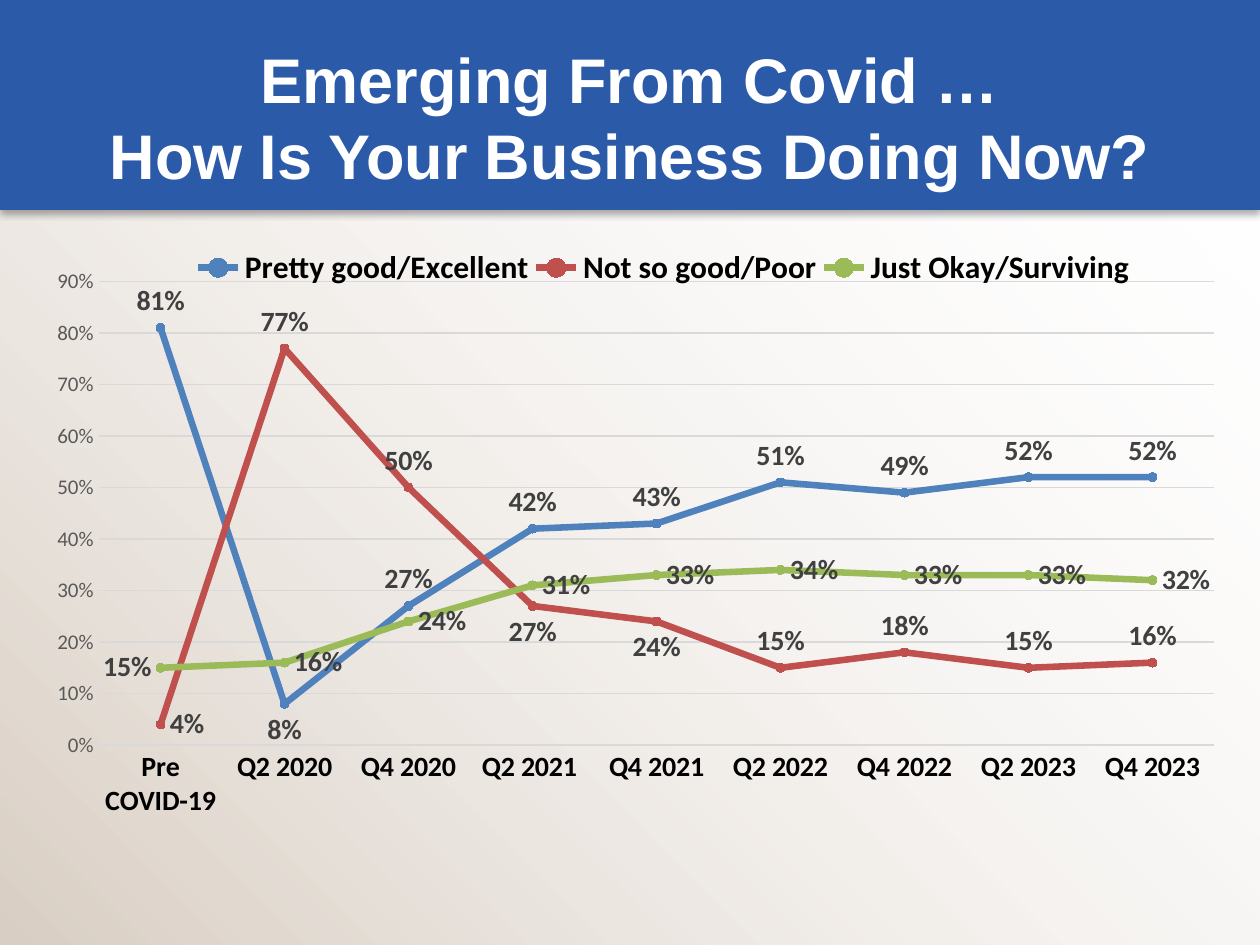
from lxml.etree import SubElement
from pptx import Presentation
from pptx.chart.data import CategoryChartData
from pptx.dml.color import RGBColor
from pptx.enum.chart import XL_CHART_TYPE, XL_LABEL_POSITION, XL_LEGEND_POSITION, XL_MARKER_STYLE, XL_TICK_MARK
from pptx.enum.shapes import MSO_SHAPE
from pptx.enum.text import MSO_ANCHOR, PP_ALIGN
from pptx.oxml import parse_xml
from pptx.oxml.ns import nsdecls, qn
from pptx.util import Pt

SCALE = 914400 / 126
WIDE, HIGH = 1260, 945
ABOVE, BELOW = XL_LABEL_POSITION.ABOVE, XL_LABEL_POSITION.BELOW
LEFT, RIGHT = XL_LABEL_POSITION.LEFT, XL_LABEL_POSITION.RIGHT

CATS = ["Pre COVID-19", "Q2 2020", "Q4 2020", "Q2 2021 ", "Q4 2021",
        "Q2 2022", "Q4 2022", "Q2 2023", "Q4 2023"]
LINES = [
    ("Pretty good/Excellent", [81, 8, 27, 42, 43, 51, 49, 52, 52],
     "4F81BD", ABOVE, {1: BELOW}),
    ("Not so good/Poor", [4, 77, 50, 27, 24, 15, 18, 15, 16],
     "C0504D", ABOVE, {0: RIGHT, 3: BELOW, 4: BELOW}),
    ("Just Okay/Surviving", [15, 16, 24, 31, 33, 34, 33, 33, 32],
     "9BBB59", RIGHT, {0: LEFT}),
]


def px(num):
    return round(num * SCALE)


def paint(code):
    return RGBColor.from_string(code)


def style(font, size, color, bold=False, name="Calibri"):
    font.size = Pt(size)
    font.bold = bold
    font.name = name
    font.color.rgb = paint(color)


def write(frame, text, align=PP_ALIGN.CENTER, **look):
    frame.text = text
    for para in frame.paragraphs:
        para.alignment = align
        for run in para.runs:
            style(run.font, **look)


def block(slide, box):
    shape = slide.shapes.add_shape(MSO_SHAPE.RECTANGLE, *map(px, box))
    shape.shadow.inherit = False
    shape.line.fill.background()
    return shape


def back(slide, box):
    shape = block(slide, box)
    shape.fill.gradient()
    shape.fill.gradient_angle = 45
    for stop, code, spot in zip(shape.fill.gradient_stops, ("DACFC4", "FFFFFF"), (0, 1)):
        stop.color.rgb = paint(code)
        stop.position = spot
    last = list(shape.element.spPr.iter(qn("a:srgbClr")))[-1]
    SubElement(last, qn("a:alpha"), val="0")


def header(slide, box):
    left, top, wide, high = box
    band = block(slide, box)
    band.fill.solid()
    band.fill.fore_color.rgb = paint("2B5AA9")
    glow = band.element.spPr.find(qn("a:effectLst"))
    glow.append(parse_xml(
        f'<a:outerShdw {nsdecls("a")} blurRad="{Pt(4)}" dist="{Pt(2.2)}" dir="5400000" '
        'rotWithShape="0"><a:srgbClr val="000000"><a:alpha val="32000"/></a:srgbClr></a:outerShdw>'))
    title = slide.shapes.title
    title.left, title.top = px(left + 63), px(top + 38)
    title.width, title.height = px(wide - 126), px(high - 53)
    frame = title.text_frame
    frame.margin_left = frame.margin_right = px(6)
    frame.margin_top = frame.margin_bottom = px(6)
    frame.vertical_anchor = MSO_ANCHOR.MIDDLE
    write(frame, "Emerging From Covid …\vHow Is Your Business Doing Now?",
          size=36, color="FFFFFF", bold=True, name="Arial")
    slide.shapes.element.append(title.element)


def layout(node, index, inner=False, **parts):
    old = node.find(qn("c:layout"))
    if old is not None:
        node.remove(old)
    new = parse_xml(f'<c:layout {nsdecls("c")}><c:manualLayout/></c:layout>')
    if inner:
        SubElement(new[0], qn("c:layoutTarget"), val="inner")
    for key in ("xMode", "yMode"):
        SubElement(new[0], qn("c:" + key), val="edge")
    for key, val in parts.items():
        SubElement(new[0], qn("c:" + key), val=str(val))
    node.insert(index, new)


def axes(chart):
    cat, val = chart.category_axis, chart.value_axis
    for axis in (cat, val):
        axis.major_tick_mark = axis.minor_tick_mark = XL_TICK_MARK.NONE
    style(cat.tick_labels.font, 16, "000000", True)
    style(val.tick_labels.font, 12, "595959")
    val.minimum_scale, val.maximum_scale, val.major_unit = 0, 0.9, 0.1
    val.tick_labels.number_format = "0%"
    val.tick_labels.number_format_is_linked = False
    val.format.line.fill.background()
    for line in (cat.format.line, val.major_gridlines.format.line):
        line.color.rgb = paint("D9D9D9")
        line.width = Pt(0.75)


def trace(line, color, place, moved):
    line.smooth = False
    line.format.line.color.rgb = paint(color)
    line.format.line.width = Pt(3.75)
    mark = line.marker
    mark.style, mark.size = XL_MARKER_STYLE.CIRCLE, 5
    mark.format.fill.solid()
    mark.format.fill.fore_color.rgb = paint(color)
    mark.format.line.color.rgb = paint(color)
    labels = line.data_labels
    labels.show_value = True
    labels.number_format = "0%"
    labels.number_format_is_linked = False
    labels.position = place
    style(labels.font, 16, "404040", True)
    for index, side in moved.items():
        label = line.points[index].data_label
        style(label.font, 16, "404040", True)
        label.position = side


def graph(slide, box):
    data = CategoryChartData(number_format="0%")
    data.categories = CATS
    for name, vals, *_ in LINES:
        data.add_series(name, [val / 100 for val in vals])
    chart = slide.shapes.add_chart(XL_CHART_TYPE.LINE_MARKERS, *map(px, box), data).chart
    style(chart.font, 10, "000000")
    chart.has_title = False
    chart.plots[0].vary_by_categories = False
    axes(chart)
    for line, (_, _, color, place, moved) in zip(chart.plots[0].series, LINES):
        trace(line, color, place, moved)
    chart.has_legend = True
    legend = chart.legend
    legend.position = XL_LEGEND_POSITION.BOTTOM
    legend.include_in_layout = False
    style(legend.font, 18, "000000", True)
    layout(legend._element, 1, x=0.14, y=0.01, w=0.78, h=0.07)
    area = chart._chartSpace.chart.plotArea
    layout(area, 0, inner=True, x=0.064, y=0.069, w=0.92, h=0.81)


def main():
    deck = Presentation()
    deck.slide_width, deck.slide_height = px(WIDE), px(HIGH)
    slide = deck.slides.add_slide(deck.slide_layouts[5])
    back(slide, (0, 0, WIDE, HIGH))
    header(slide, (0, 0, WIDE, 210))
    graph(slide, (21, 242, 1213, 576))
    deck.save("out.pptx")


if __name__ == "__main__":
    main()
